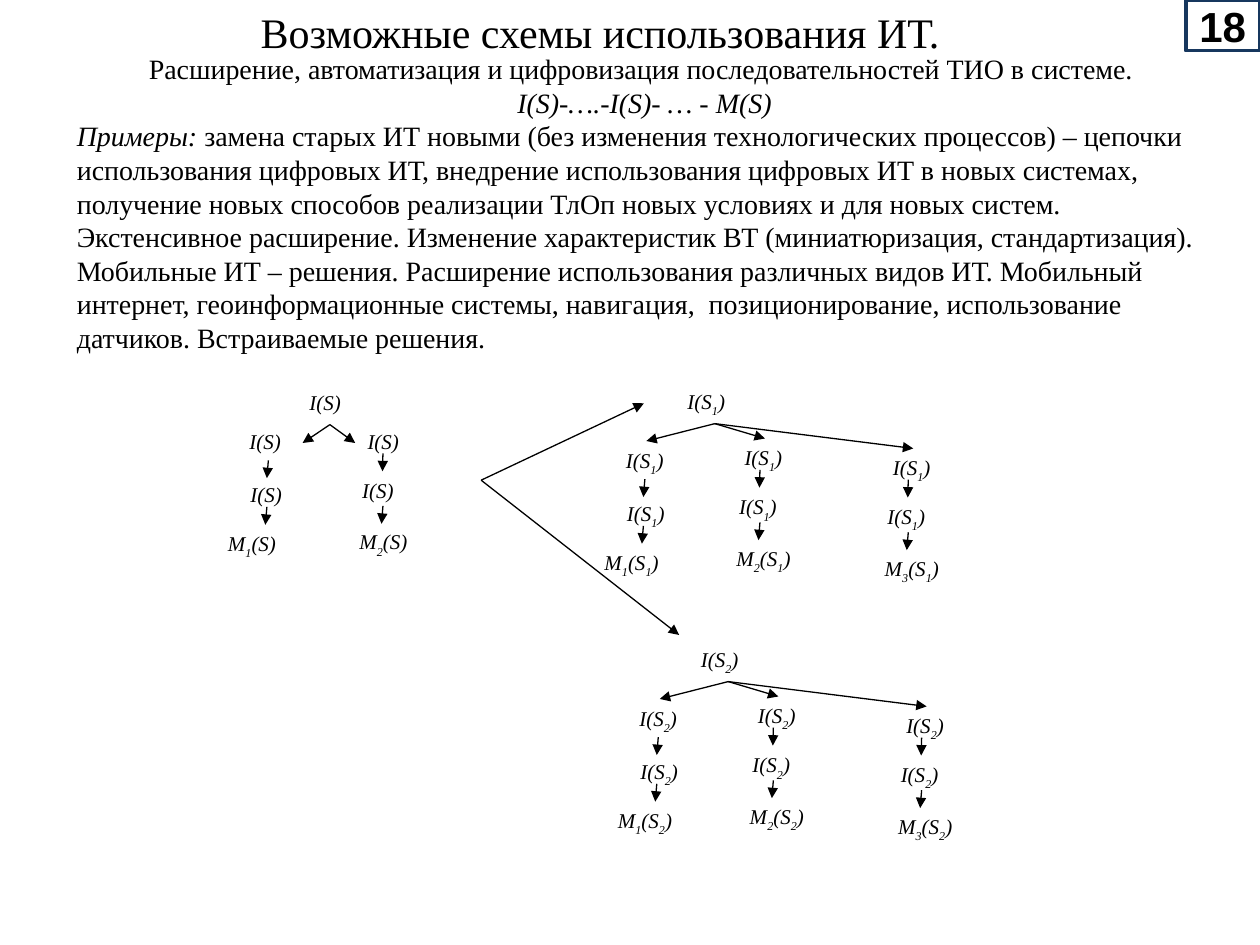
from lxml import etree
from pptx import Presentation
from pptx import util as u
from pptx.dml.color import RGBColor
from pptx.enum import shapes, text
from pptx.oxml.ns import qn

COLORS = {"ink": "000000", "paper": "FFFFFF", "navy": "17375E"}
LEFT, CENTER = text.PP_ALIGN.LEFT, text.PP_ALIGN.CENTER
TOP, MIDDLE = text.MSO_ANCHOR.TOP, text.MSO_ANCHOR.MIDDLE
SERIF = "Times New Roman"
BOX_WIDTH, BOX_HEIGHT = 1.32, 0.84
STEP = (-0.03, 0.36)  # run of every short arrow

# Column layouts, measured from the corner of the column's top box
FIRST_COLUMN = {"middle": (0.02, 1.07), "last": (-0.54, 2.06), "width": 2.11,
                "arrows": [(0.63, 0.77), (0.6, 1.71)], "joined": False}
NEXT_COLUMN = {"middle": (-0.11, 0.99), "last": (-0.27, 2.03), "width": 2.01,
               "arrows": [(0.56, 0.63), (0.56, 1.69)], "joined": True}


def color(name):
    return RGBColor.from_string(COLORS[name])


def shift(point, offset):
    return point[0] + offset[0], point[1] + offset[1]


def set_values(target, values):
    for name, value in values.items():
        setattr(target, name, value)


class SlideBuilder:
    def __init__(self, page):
        self.page = page

    def put_text(self, frame, lines, anchor=TOP, **font):
        """Each line is (alignment, [(wording, italic, subscript)])."""
        set_values(frame, {"word_wrap": True, "vertical_anchor": anchor})
        for index, (align, spans) in enumerate(lines):
            para = frame.add_paragraph() if index else frame.paragraphs[0]
            para.alignment = align
            for wording, italic, subscript in spans:
                span = para.add_run()
                span.text = wording
                set_values(span.font, {"name": SERIF, "italic": italic, **font})
                span.font.color.rgb = color("ink")
                if subscript:
                    span.font._element.set("baseline", "-30000")

    def textbox(self, left, top, width, height, lines, size):
        box = self.page.shapes.add_textbox(*map(u.Cm, (left, top, width, height)))
        self.put_text(box.text_frame, lines, MIDDLE, size=u.Pt(size))
        box.text_frame.auto_size = text.MSO_AUTO_SIZE.SHAPE_TO_FIT_TEXT

    def rectangle(self, left, top, width, height, line, weight, fill=None):
        box = self.page.shapes.add_shape(
            shapes.MSO_SHAPE.RECTANGLE, *map(u.Cm, (left, top, width, height)))
        box.shadow.inherit = False
        if fill:
            box.fill.solid()
            box.fill.fore_color.rgb = color(fill)
        else:
            box.fill.background()
        box.line.color.rgb = color(line)
        box.line.width = u.Pt(weight)
        return box

    def node(self, corner, label, width=BOX_WIDTH):
        """White box with a formula; an underscore lowers the next character."""
        box = self.rectangle(*corner, width, BOX_HEIGHT, "paper", 0.75, "paper")
        head, *parts = label.split("_")
        spans = [(head, True, False)]
        for part in parts:
            spans += [(part[0], True, True), (part[1:], True, False)]
        self.put_text(box.text_frame, [(LEFT, spans)], size=u.Pt(12))
        return box

    def arrow(self, start, end, source=None, target=None):
        """source and target are (box, side) pairs to join."""
        line = self.page.shapes.add_connector(
            shapes.MSO_CONNECTOR.STRAIGHT, *map(u.Cm, (*start, *end)))
        if source:
            line.begin_connect(*source)
        if target:
            line.end_connect(*target)
        line.line.color.rgb = color("ink")
        line.line.width = u.Pt(0.75)
        properties = line._element.spPr
        etree.SubElement(properties.find(qn("a:ln")), qn("a:tailEnd"), type="triangle")
        etree.SubElement(properties, qn("a:effectLst"))

    def column(self, corner, number, system, layout):
        top = self.node(corner, f"I({system})")
        middle = self.node(shift(corner, layout["middle"]), f"I({system})")
        self.node(shift(corner, layout["last"]), f" M_{number}({system})", layout["width"])
        targets = [(middle, 0) if layout["joined"] else None, None]
        for offset, target in zip(layout["arrows"], targets):
            start = shift(corner, offset)
            self.arrow(start, shift(start, STEP), target=target)
        return top

    def tree(self, corner, system, root_width, offsets, sides):
        root = self.node(corner, f"I({system})", root_width)
        tops = [self.column(shift(corner, offset), number, system,
                            FIRST_COLUMN if number == 1 else NEXT_COLUMN)
                for number, offset in enumerate(offsets, 1)]
        for top, side in zip(tops, sides):
            self.arrow(corner, corner, (root, 2), (top, side))


def main():
    deck = Presentation()
    deck.slide_width, deck.slide_height = u.Cm(25.4), u.Cm(19.05)
    page = deck.slides.add_slide(deck.slide_layouts[6])
    builder = SlideBuilder(page)

    # Page number
    badge = builder.rectangle(23.9, 0, 1.5, 1.02, "navy", 2.25)
    builder.put_text(badge.text_frame, [(CENTER, [("18", False, False)])], MIDDLE,
                     name="Arial", size=u.Pt(24), bold=True)

    # Title
    builder.textbox(0.51, 0, 23.39, 1.27, [
        (CENTER, [("Возможные схемы использования ИТ. ", False, False)])], 24)

    # Source tree
    builder.tree((5.99, 7.72), "S", BOX_WIDTH, [(-1.21, 0.79), (1.17, 0.79)], [3, 1])

    # Extended trees and the arrows that lead to them
    offsets = [(-1.24, 1.19), (1.15, 1.14), (4.14, 1.34)]
    for system, corner in (("S_1", (13.61, 7.7)), ("S_2", (13.88, 12.9))):
        builder.tree(corner, system, 1.6, offsets, [0, 0, 0])
    for end in ((12.98, 8.13), (13.69, 12.8)):
        builder.arrow((9.7, 9.68), end)

    # Explanation
    builder.textbox(1.3, 0.89, 23.39, 6.4, [
        (CENTER, [("Расширение, автоматизация и цифровизация последовательностей "
                   "ТИО в системе. ", False, False)]),
        (CENTER, [("I(S)-….-I(S)- … - M(S)", True, False)]),
        (LEFT, [("Примеры: ", True, False),
                ("замена старых ИТ новыми (без изменения технологических процессов) – "
                 "цепочки использования цифровых ИТ, внедрение использования цифровых ИТ "
                 "в новых системах,  получение новых способов реализации ТлОп новых "
                 "условиях и для новых систем.", False, False)]),
        (LEFT, [("Экстенсивное расширение. Изменение характеристик ВТ "
                 "(миниатюризация, стандартизация).", False, False)]),
        (LEFT, [("Мобильные ИТ – решения. Расширение использования различных видов ИТ. "
                 "Мобильный интернет, геоинформационные системы, навигация,  "
                 "позиционирование, использование датчиков. Встраиваемые решения.",
                 False, False)]),
    ], 16)

    deck.save("out.pptx")


if __name__ == "__main__":
    main()
